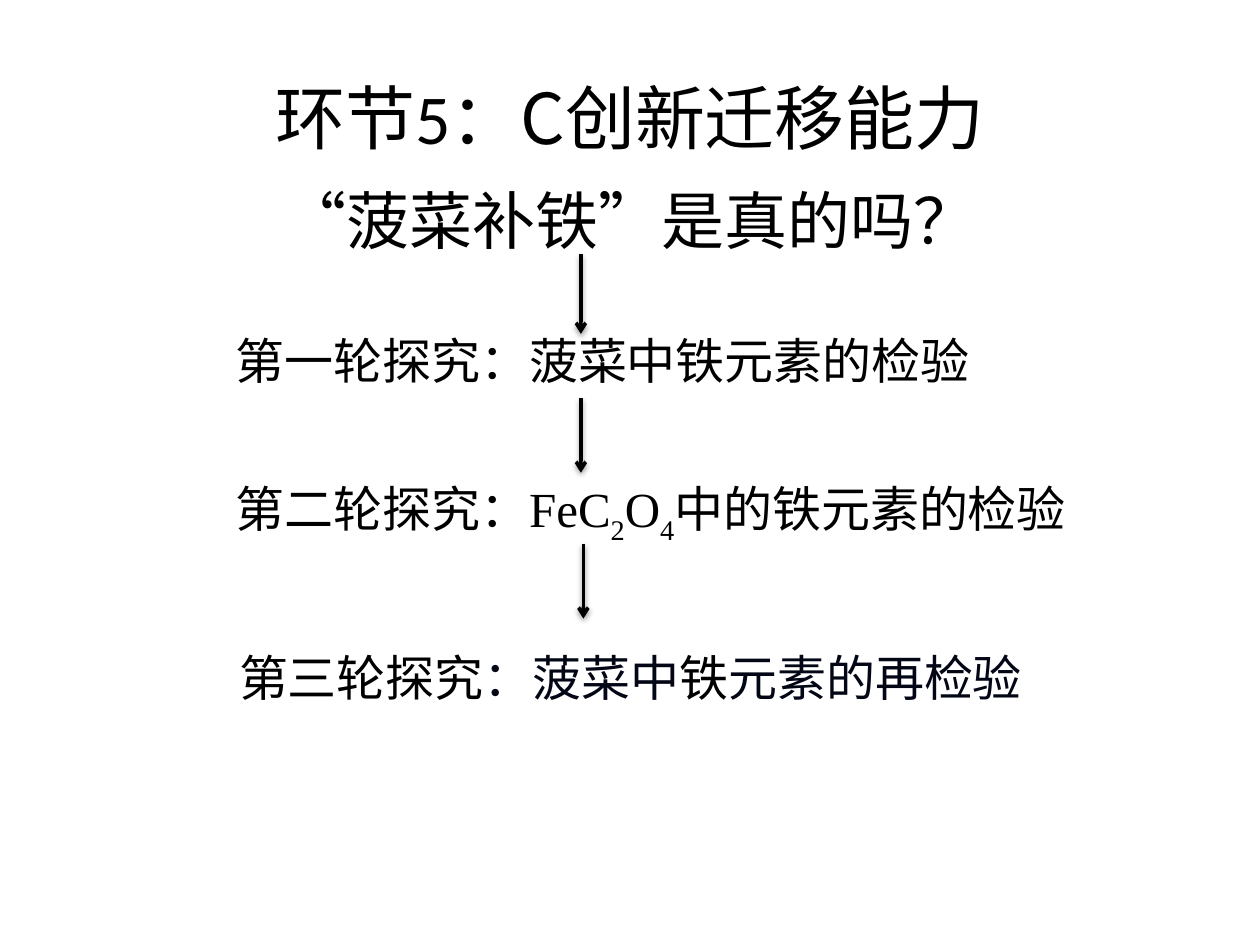
"""Build the slide on the three rounds of the spinach inquiry."""
from lxml import etree
from pptx import Presentation
from pptx.dml.color import RGBColor
from pptx.enum.shapes import MSO_CONNECTOR
from pptx.enum.text import MSO_ANCHOR, PP_ALIGN
from pptx.oxml import parse_xml
from pptx.oxml.ns import qn
from pptx.util import Cm, Pt

LINE = MSO_CONNECTOR.STRAIGHT
MID = MSO_ANCHOR.MIDDLE
LEFT = PP_ALIGN.LEFT
CENTER = PP_ALIGN.CENTER
BLACK = RGBColor(0, 0, 0)
NAVY = RGBColor(0x03, 0x06, 0x15)
HAN = "Noto Sans CJK SC"
SANS = "Calibri"
SERIF = "Times New Roman"
SHADE = (
    '<a:effectLst xmlns:a="http://schemas.openxmlformats.org/drawingml/2006/main">'
    '<a:outerShdw blurRad="40000" dist="20000" dir="5400000" rotWithShape="0">'
    '<a:srgbClr val="000000"><a:alpha val="38000"/></a:srgbClr>'
    '</a:outerShdw></a:effectLst>'
)


def add_run(par, text, size, face=HAN, color=BLACK, base=0):
    """Add one run with its Latin and East Asian fonts."""
    run = par.add_run()
    run.text = text
    font = run.font
    font.size = Pt(size)
    font.name = face
    font.color.rgb = color
    props = run._r.get_or_add_rPr()
    etree.SubElement(props, qn("a:ea"), typeface=HAN)
    if base:
        props.set("baseline", str(base * 1000))


def fill_text(shape, size, runs, align):
    """Write the runs into the first paragraph of a shape."""
    shape.text_frame.word_wrap = True
    par = shape.text_frame.paragraphs[0]
    par.alignment = align
    for run in runs:
        add_run(par, run[0], size, *run[1:])


def add_title(slide, runs):
    """Place and fill the title."""
    title = slide.shapes.title
    title.left, title.top = Cm(1.27), Cm(0.76)
    title.width, title.height = Cm(22.86), Cm(3.18)
    title.text_frame.vertical_anchor = MID
    fill_text(title, 40, runs, CENTER)


def add_text(slide, left, top, width, height, size, runs, align=LEFT):
    """Add a text box of one paragraph."""
    box = slide.shapes.add_textbox(Cm(left), Cm(top), Cm(width), Cm(height))
    fill_text(box, size, runs, align)


def add_arrow(slide, x, top, end):
    """Add a downward arrow with a soft shadow."""
    arrow = slide.shapes.add_connector(LINE, Cm(x), Cm(top), Cm(x), Cm(end))
    arrow.line.color.rgb = BLACK
    arrow.line.width = Pt(2)
    etree.SubElement(arrow.line._get_or_add_ln(), qn("a:tailEnd"), type="arrow")
    arrow._element.spPr.append(parse_xml(SHADE))


def main():
    """Build and save the slide."""
    deck = Presentation()
    deck.slide_width, deck.slide_height = Cm(25.4), Cm(19.05)
    slide = deck.slides.add_slide(deck.slide_layouts[5])

    add_title(slide, [("环节",), ("5", SANS), ("：C创新迁移能力",)])
    add_text(slide, 1.27, 3.53, 22.86, 1.8, 36, [
        ("“", SANS), ("菠菜补铁",), ("”", SANS), ("是真的吗？",)], CENTER)

    rounds = [
        (4.5, 6.53, 15.6, [("第一轮探究：菠菜中铁元素的检验",)]),
        (4.5, 9.53, 17.4, [
            ("第二轮探究",), ("：FeC", SERIF), ("2", SERIF, BLACK, -25),
            ("O", SERIF), ("4", SERIF, BLACK, -25),
            ("中的铁元素的检验", SERIF)]),
        (4.57, 12.93, 17.91, [
            ("第三轮探究",), ("：菠菜中", HAN, NAVY), ("铁",),
            ("元素的再检验", HAN, NAVY)]),
    ]
    for left, top, width, runs in rounds:
        add_text(slide, left, top, width, 1.45, 28, runs)

    for x, top, end in [(11.71, 5.13, 6.73), (11.71, 8.03, 9.53),
                        (11.76, 10.97, 12.47)]:
        add_arrow(slide, x, top, end)

    deck.save("out.pptx")


if __name__ == "__main__":
    main()
